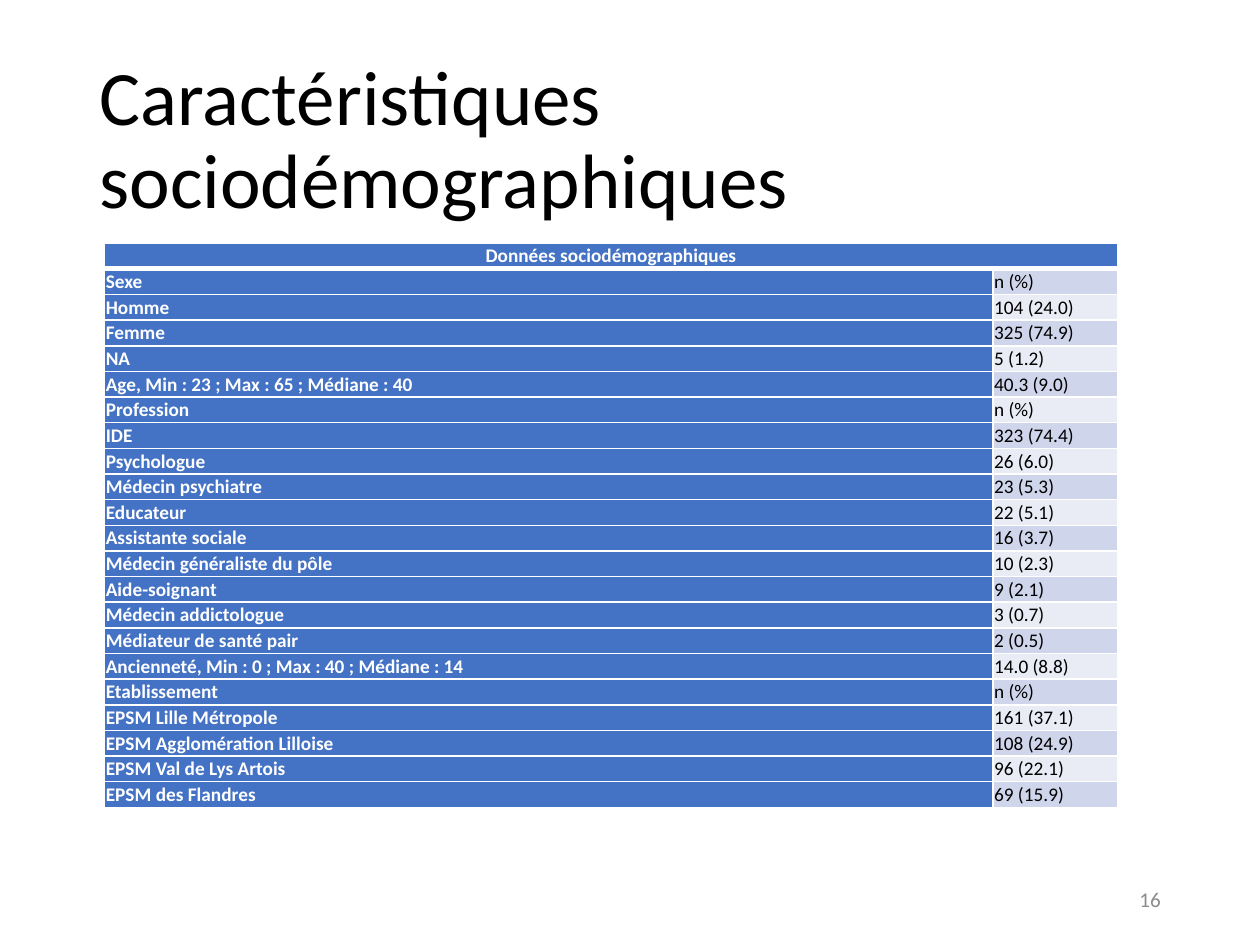
import pptx
import pptx.dml.color
import pptx.enum.text
import pptx.oxml.ns
import pptx.util
from lxml import etree

Inches = pptx.util.Inches
Pt = pptx.util.Pt
Align = pptx.enum.text.PP_ALIGN
Anchor = pptx.enum.text.MSO_ANCHOR


def color(code):
    return pptx.dml.color.RGBColor.from_string(code)


class Deck:
    font = "Calibri"
    white = "FFFFFF"
    black = "000000"
    blue = "4472C4"
    bands = ("CFD5EA", "E9EBF5")
    inset = Inches(0.01)

    def __init__(self, width, height):
        self.file = pptx.Presentation()
        self.file.slide_width = Inches(width)
        self.file.slide_height = Inches(height)
        self.slide = self.file.slides.add_slide(self.file.slide_layouts[6])

    def style(self, para, size, code, align, bold=False):
        para.alignment = align
        para.font.name = self.font
        para.font.size = Pt(size)
        para.font.bold = bold
        para.font.color.rgb = color(code)

    def text(self, box, words, size, code, align):
        frame = self.slide.shapes.add_textbox(*map(Inches, box)).text_frame
        frame.word_wrap = True
        frame.vertical_anchor = Anchor.MIDDLE
        para = frame.paragraphs[0]
        para.text = words
        para.line_spacing = 0.9
        self.style(para, size, code, align)

    def border(self, cell, side, width):
        tag = pptx.oxml.ns.qn
        props = cell._tc.get_or_add_tcPr()
        line = etree.SubElement(props, tag("a:ln" + side), w=str(Pt(width)))
        fill = etree.SubElement(line, tag("a:solidFill"))
        etree.SubElement(fill, tag("a:srgbClr"), val=self.white)

    def cell(self, cell, words, fill, code, align, bold, top=1, bottom=1):
        for side, width in zip("LRTB", (1, 1, top, bottom)):
            self.border(cell, side, width)
        cell.fill.solid()
        cell.fill.fore_color.rgb = color(fill)
        cell.margin_left = cell.margin_right = self.inset
        cell.margin_top = cell.margin_bottom = self.inset
        cell.vertical_anchor = Anchor.BOTTOM
        para = cell.text_frame.paragraphs[0]
        para.text = words
        self.style(para, 11, code, align, bold)

    def table(self, left, top, widths, height, head, rows):
        count = len(rows) + 1
        grid = self.slide.shapes.add_table(
            count, len(widths), Inches(left), Inches(top),
            Inches(sum(widths)), Inches(height * count)).table
        for col, width in zip(grid.columns, widths):
            col.width = Inches(width)
        for row in grid.rows:
            row.height = Inches(height)
        grid.cell(0, 0).merge(grid.cell(0, 1))
        for col, words in enumerate((head, "")):
            self.cell(grid.cell(0, col), words, self.blue, self.white,
                      Align.CENTER, True, bottom=3)
        for num, (label, value) in enumerate(rows, 1):
            top = 3 if num == 1 else 1
            self.cell(grid.cell(num, 0), label, self.blue, self.white,
                      Align.JUSTIFY, True, top)
            self.cell(grid.cell(num, 1), value, self.bands[(num - 1) % 2],
                      self.black, Align.JUSTIFY, False, top)


def main():
    rows = [
        ("Sexe", "n (%)"),
        ("Homme", "104 (24.0)"),
        ("Femme", "325 (74.9)"),
        ("NA", "5 (1.2)"),
        ("Age, Min : 23 ; Max : 65 ; Médiane : 40", "40.3 (9.0)"),
        ("Profession", "n (%)"),
        ("IDE", "323 (74.4)"),
        ("Psychologue", "26 (6.0)"),
        ("Médecin psychiatre", "23 (5.3)"),
        ("Educateur", "22 (5.1)"),
        ("Assistante sociale", "16 (3.7)"),
        ("Médecin généraliste du pôle", "10 (2.3)"),
        ("Aide-soignant", "9 (2.1)"),
        ("Médecin addictologue", "3 (0.7)"),
        ("Médiateur de santé pair", "2 (0.5)"),
        ("Ancienneté, Min : 0 ; Max : 40 ; Médiane : 14", "14.0 (8.8)"),
        ("Etablissement", "n (%)"),
        ("EPSM Lille Métropole", "161 (37.1)"),
        ("EPSM Agglomération Lilloise", "108 (24.9)"),
        ("EPSM Val de Lys Artois", "96 (22.1)"),
        ("EPSM des Flandres", "69 (15.9)"),
    ]
    deck = Deck(10, 7.5)
    deck.text((0.69, 0.4, 8.62, 1.45), "Caractéristiques sociodémographiques",
              44, deck.black, Align.LEFT)
    deck.table(0.83, 1.93, (7.05, 0.99), 0.19, "Données sociodémographiques", rows)
    deck.text((7.06, 6.95, 2.25, 0.4), "16", 12, "8C8C8C", Align.RIGHT)
    deck.file.save("out.pptx")


if __name__ == "__main__":
    main()
